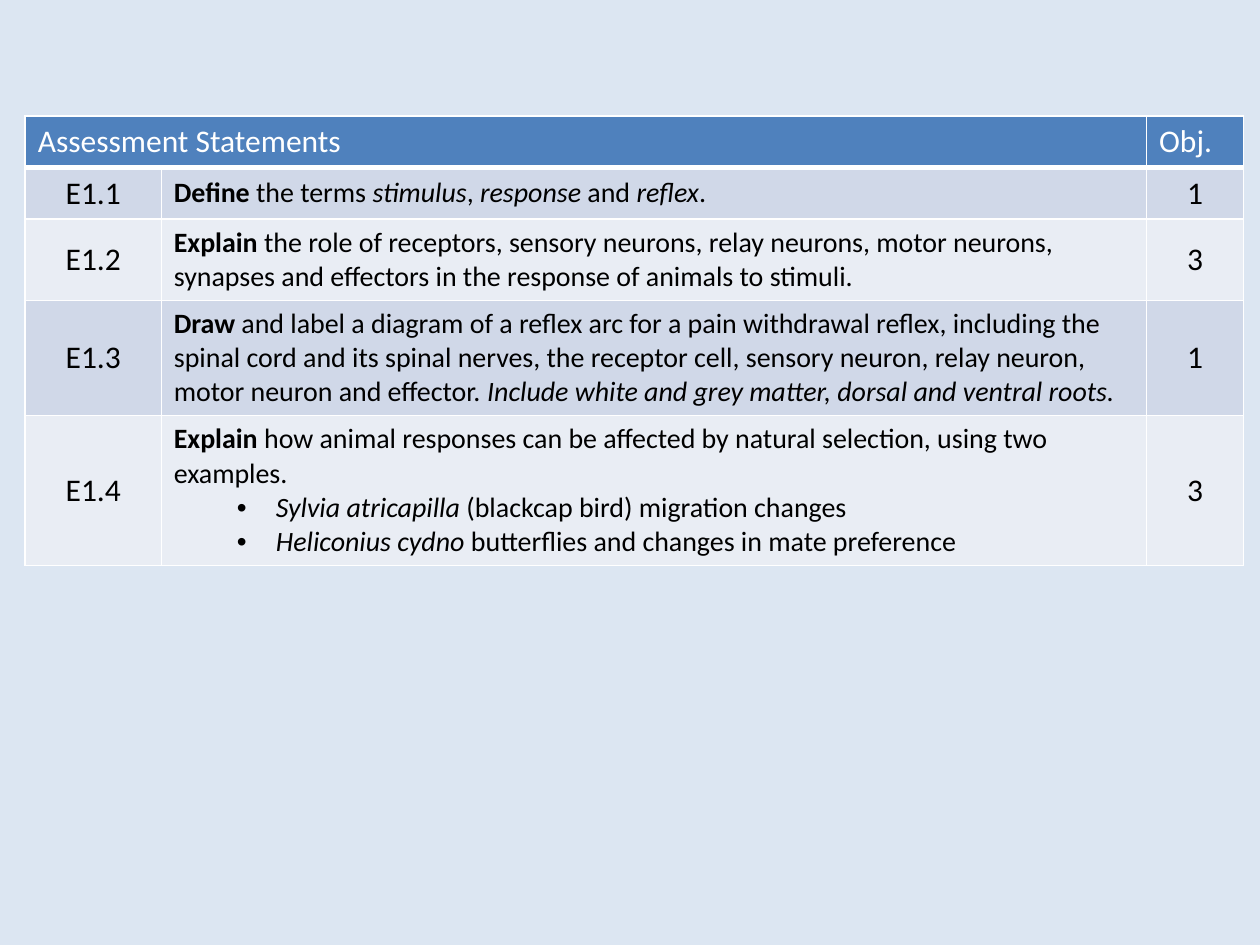
from typing import NamedTuple

from lxml.etree import SubElement
from pptx import Presentation
from pptx.dml.color import RGBColor
from pptx.enum.text import MSO_ANCHOR, PP_ALIGN
from pptx.oxml.ns import qn
from pptx.util import Inches, Pt

FONT = "Calibri"
WHITE, BLACK = "FFFFFF", "000000"
HEADER_FILL = "4F81BD"
BAND_FILLS = ("D0D8E8", "E9EDF4")
COL_WIDTHS = (1.08, 7.82, 0.77)
ROW_HEIGHTS = (0.41, 0.41, 0.64, 0.91, 1.19)


class Run(NamedTuple):
    text: str
    bold: bool = False
    italic: bool = False


class Para(NamedTuple):
    runs: list[Run]
    bullet: bool = False


class Statement(NamedTuple):
    code: str
    paras: list[Para]
    objective: str


STATEMENTS = [
    Statement("E1.1", [Para([
        Run("Define", bold=True), Run(" the terms "),
        Run("stimulus", italic=True), Run(", "),
        Run("response", italic=True), Run(" and "),
        Run("reflex", italic=True), Run(".")])], "1"),
    Statement("E1.2", [Para([
        Run("Explain", bold=True),
        Run(" the role of receptors, sensory neurons, relay neurons, motor neurons, "
            "synapses and effectors in the response of animals to stimuli.")])], "3"),
    Statement("E1.3", [Para([
        Run("Draw", bold=True),
        Run(" and label a diagram of a reflex arc for a pain withdrawal reflex, "
            "including the spinal cord and its spinal nerves, the receptor cell, "
            "sensory neuron, relay neuron, motor neuron and effector. "),
        Run("Include white and grey matter, dorsal and ventral roots.",
            italic=True)])], "1"),
    Statement("E1.4", [
        Para([Run("Explain", bold=True),
              Run(" how animal responses can be affected by natural selection, "
                  "using two examples.")]),
        Para([Run("Sylvia atricapilla ", italic=True),
              Run("(blackcap bird) migration changes")], bullet=True),
        Para([Run("Heliconius cydno ", italic=True),
              Run("butterflies and changes in mate preference")], bullet=True)], "3"),
]


def rgb(color: str) -> RGBColor:
    return RGBColor.from_string(color)


def style_cell(cell, fill: str, bottom: float = 1) -> None:
    """Give a cell white borders and a solid fill."""
    tc_pr = cell._tc.get_or_add_tcPr()
    for side, width in (("L", 1), ("R", 1), ("T", 1), ("B", bottom)):
        ln = SubElement(tc_pr, qn(f"a:ln{side}"), w=str(Pt(width)))
        SubElement(SubElement(ln, qn("a:solidFill")), qn("a:srgbClr"), val=WHITE)
    cell.fill.solid()
    cell.fill.fore_color.rgb = rgb(fill)


def add_bullet(p) -> None:
    p.level = 1
    p_pr = p._p.get_or_add_pPr()
    p_pr.set("marL", str(Inches(0.81)))
    p_pr.set("indent", str(Inches(-0.31)))
    SubElement(p_pr, qn("a:buFont"), typeface="Arial")
    SubElement(p_pr, qn("a:buChar"), char="•")


def write_cell(cell, paras: list[Para], size: float, color: str = BLACK,
               align=PP_ALIGN.LEFT, anchor=MSO_ANCHOR.MIDDLE) -> None:
    cell.vertical_anchor = anchor
    tf = cell.text_frame
    for i, para in enumerate(paras):
        p = tf.add_paragraph() if i else tf.paragraphs[0]
        p.alignment = align
        if para.bullet:
            add_bullet(p)
        for run in para.runs:
            r = p.add_run()
            r.text = run.text
            r.font.name, r.font.size = FONT, Pt(size)
            r.font.bold, r.font.italic = run.bold, run.italic
            r.font.color.rgb = rgb(color)


def main() -> None:
    prs = Presentation()
    prs.slide_width, prs.slide_height = Inches(10), Inches(7.5)
    s = prs.slides.add_slide(prs.slide_layouts[6])
    s.background.fill.solid()
    s.background.fill.fore_color.rgb = rgb("DCE6F2")

    # Table grid
    table = s.shapes.add_table(
        len(ROW_HEIGHTS), len(COL_WIDTHS), Inches(0.2), Inches(0.92),
        Inches(sum(COL_WIDTHS)), Inches(sum(ROW_HEIGHTS))).table
    for col, width in zip(table.columns, COL_WIDTHS):
        col.width = Inches(width)
    for row, height in zip(table.rows, ROW_HEIGHTS):
        row.height = Inches(height)

    # Header row
    for cell in table.rows[0].cells:
        style_cell(cell, HEADER_FILL, bottom=3)
    table.cell(0, 0).merge(table.cell(0, 1))
    for col, title in ((0, "Assessment Statements"), (2, "Obj.")):
        write_cell(table.cell(0, col), [Para([Run(title)])], 18, WHITE,
                   anchor=MSO_ANCHOR.TOP)

    # Statement rows
    for i, statement in enumerate(STATEMENTS):
        cells = list(table.rows[i + 1].cells)
        for cell in cells:
            style_cell(cell, BAND_FILLS[i % 2])
        write_cell(cells[1], statement.paras, 16)
        for cell, label in ((cells[0], statement.code), (cells[2], statement.objective)):
            write_cell(cell, [Para([Run(label)])], 18, align=PP_ALIGN.CENTER)

    prs.save("out.pptx")


if __name__ == "__main__":
    main()
